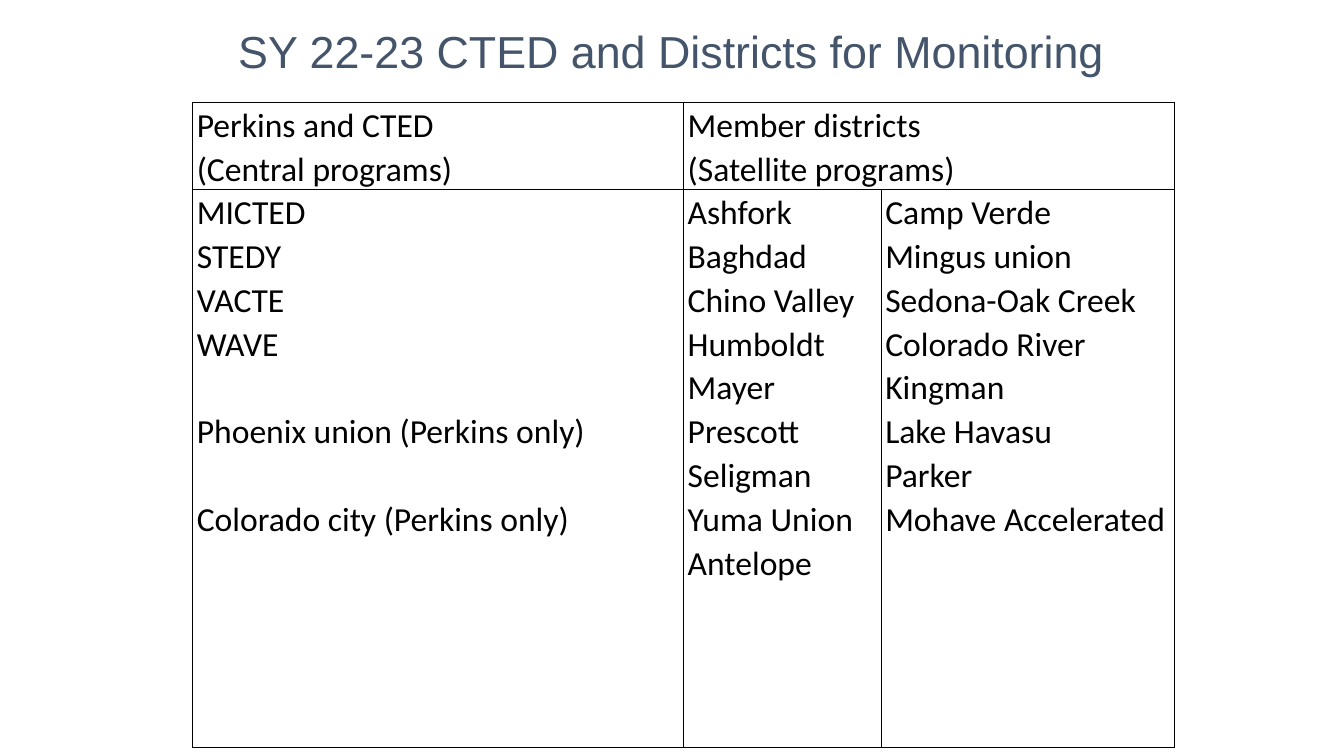
from dataclasses import dataclass

from lxml.etree import SubElement
from pptx import Presentation
from pptx.dml.color import RGBColor
from pptx.enum.text import MSO_ANCHOR, PP_ALIGN
from pptx.oxml import parse_xml
from pptx.oxml.ns import nsdecls, qn
from pptx.util import Cm, Pt


@dataclass(frozen=True)
class Theme:
    title_font: str = "Arial"
    body_font: str = "Calibri"
    title_size: Pt = Pt(32)
    body_size: Pt = Pt(24)
    line_gap: Pt = Pt(31.3)
    border_width: Pt = Pt(1)
    title_color: RGBColor = RGBColor(0x44, 0x54, 0x6A)
    text_color: RGBColor = RGBColor(0, 0, 0)


THEME = Theme()
COLUMN_WIDTHS = (Cm(12.37), Cm(4.98), Cm(7.39))
ROW_HEIGHTS = (Cm(2.2), Cm(14.05))
HEADERS = (
    ("Perkins and CTED", "(Central programs)"),
    ("Member districts", "(Satellite programs)"),
)
PROGRAMS = (
    ("MICTED", "STEDY", "VACTE", "WAVE",
     "Phoenix union (Perkins only)", "Colorado city (Perkins only)"),
    ("Ashfork", "Baghdad", "Chino Valley", "Humboldt", "Mayer",
     "Prescott", "Seligman", "Yuma Union", "Antelope"),
    ("Camp Verde", "Mingus union", "Sedona-Oak Creek", "Colorado River",
     "Kingman", "Lake Havasu", "Parker", "Mohave Accelerated"),
)


def style_font(para, name, size, color):
    para.font.name = name
    para.font.size = size
    para.font.color.rgb = color


def add_title(page, text):
    box = page.shapes.add_textbox(Cm(1.57), Cm(0.58), Cm(30.71), Cm(1.55))
    frame = box.text_frame
    frame.word_wrap = True
    frame.vertical_anchor = MSO_ANCHOR.MIDDLE
    para = frame.paragraphs[0]
    para.text = text
    para.alignment = PP_ALIGN.CENTER
    para.line_spacing = 0.9
    style_font(para, THEME.title_font, THEME.title_size, THEME.title_color)


def fill_cell(cell, lines):
    """Write one paragraph per line, setting Perkins-only entries apart."""
    cell.text = "\n".join(lines)
    for para in cell.text_frame.paragraphs:
        para.line_spacing = 1.07
        if "Perkins only" in para.text:
            para.space_before = THEME.line_gap
        style_font(para, THEME.body_font, THEME.body_size, THEME.text_color)


def format_cell(cell):
    """Set narrow margins, no fill and a border on all four sides."""
    cell.margin_left = cell.margin_right = Cm(0.1)
    cell.margin_top = cell.margin_bottom = 0
    cell.fill.background()
    properties = cell._tc.get_or_add_tcPr()
    for position, side in enumerate(("lnL", "lnR", "lnT", "lnB")):
        line = parse_xml(f'<a:{side} {nsdecls("a")} w="{THEME.border_width}"/>')
        fill = SubElement(line, qn("a:solidFill"))
        SubElement(fill, qn("a:srgbClr"), val=str(THEME.text_color))
        properties.insert(position, line)


def add_district_table(page):
    frame = page.shapes.add_table(
        len(ROW_HEIGHTS), len(COLUMN_WIDTHS), Cm(4.86), Cm(2.58),
        sum(COLUMN_WIDTHS), sum(ROW_HEIGHTS))
    table = frame.table
    table.first_row = table.horz_banding = False
    for column, width in zip(table.columns, COLUMN_WIDTHS):
        column.width = width
    for row, height in zip(table.rows, ROW_HEIGHTS):
        row.height = height
    for cell in table.iter_cells():
        format_cell(cell)
    table.cell(0, 1).merge(table.cell(0, 2))
    for row_index, row_texts in enumerate((HEADERS, PROGRAMS)):
        for column_index, lines in enumerate(row_texts):
            fill_cell(table.cell(row_index, column_index), lines)


def main():
    deck = Presentation()
    deck.slide_width, deck.slide_height = Cm(33.87), Cm(19.05)
    page = deck.slides.add_slide(deck.slide_layouts[6])
    add_title(page, "SY 22-23 CTED and Districts for Monitoring")
    add_district_table(page)
    deck.save("out.pptx")


if __name__ == "__main__":
    main()
